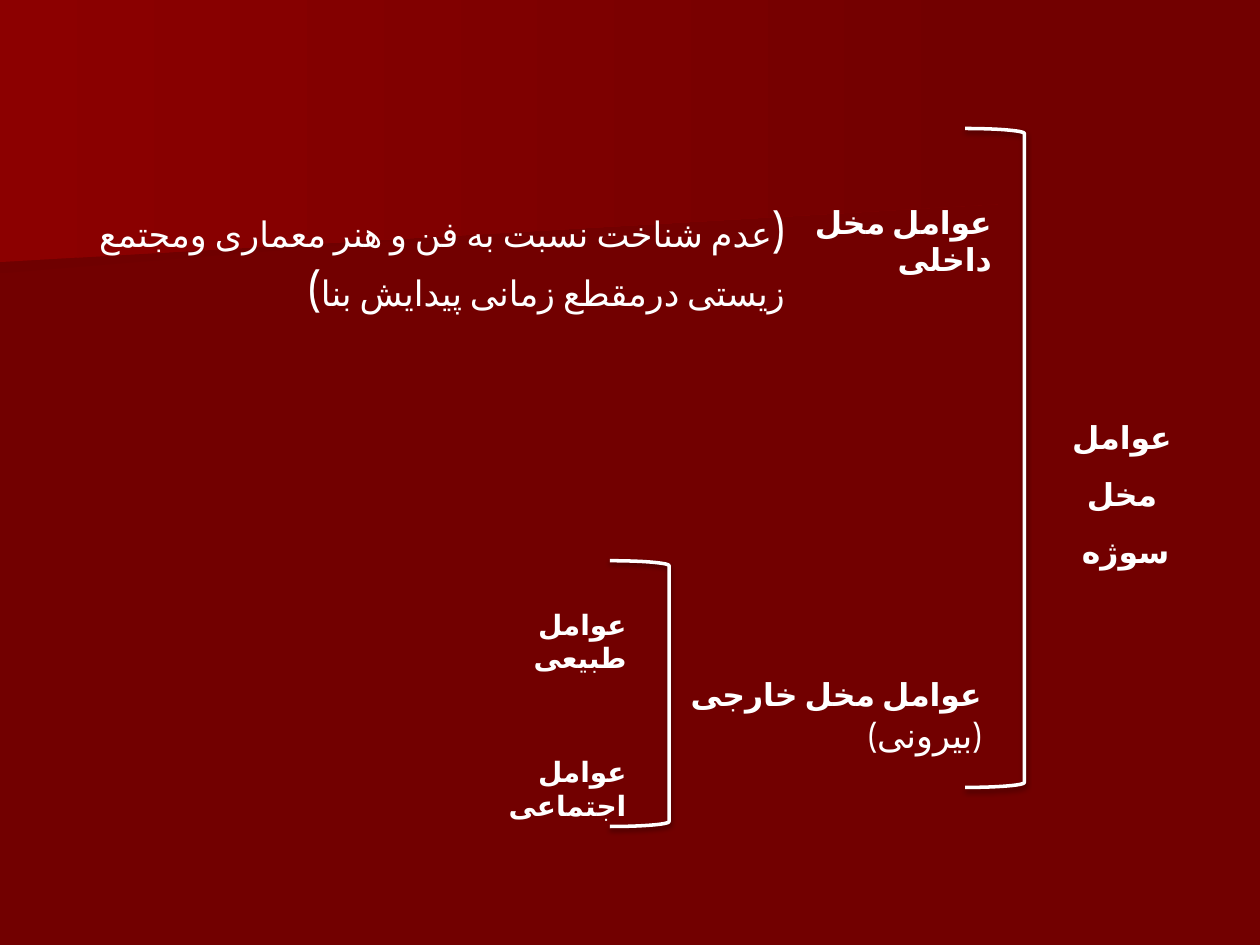
from lxml import etree
from pptx import Presentation
from pptx.dml.color import RGBColor
from pptx.enum.shapes import MSO_SHAPE
from pptx.enum.text import PP_ALIGN
from pptx.oxml import parse_xml
from pptx.oxml.ns import nsdecls, qn
from pptx.util import Inches, Pt

SHADOW = (
    f'<a:effectLst {nsdecls("a")}>'
    '<a:outerShdw blurRad="39370" dist="20320" dir="5400000" rotWithShape="0">'
    '<a:srgbClr val="000000"><a:alpha val="38000"/></a:srgbClr>'
    '</a:outerShdw></a:effectLst>'
)


def rgb(value):
    return RGBColor.from_string(value)


def add_rtl_text(s, box, runs, align=PP_ALIGN.RIGHT, spacing=None):
    """Add one right-to-left paragraph; runs are (text, size, bold)."""
    tf = s.shapes.add_textbox(*map(Inches, box)).text_frame
    tf.word_wrap = True
    p = tf.paragraphs[0]
    p.alignment = align
    p.line_spacing = spacing
    p._p.get_or_add_pPr().set("rtl", "1")
    for text, size, bold in runs:
        r = p.add_run()
        r.text = text
        r.font.size = Pt(size)
        r.font.bold = bold
        r.font.name = "Cabin"
        r.font.color.rgb = rgb("FFFFFF")
        # Persian letters take the complex-script font and language
        rPr = r._r.get_or_add_rPr()
        rPr.set("lang", "fa-IR")
        etree.SubElement(rPr, qn("a:cs"), typeface="Cabin")


prs = Presentation()
prs.slide_width, prs.slide_height = Inches(10), Inches(7.5)
s = prs.slides.add_slide(prs.slide_layouts[6])
s.background.fill.solid()
s.background.fill.fore_color.rgb = rgb("720000")

# Slanted bands at the top
bands = [
    ("6F0000", [(7.78, 1.53), (0, 2.17), (0, 1.01), (7.79, 1.01), (7.78, 1.28)]),
    ("8C0000", [(7.92, 1.62), (0, 2.08), (0, 0), (7.92, 0)]),
]
for start_color, points in bands:
    start, *rest = [(Inches(x), Inches(y)) for x, y in points]
    builder = s.shapes.build_freeform(*start)
    builder.add_line_segments(rest, close=True)
    sp = builder.convert_to_shape()
    sp.shadow.inherit = False
    sp.line.fill.background()
    sp.fill.gradient()
    sp.fill.gradient_angle = 0
    for stop, color, position in zip(sp.fill.gradient_stops, (start_color, "720000"), (0, 1)):
        stop.color.rgb = rgb(color)
        stop.position = position

# Brackets
for box in [(7.66, 1.02, 0.47, 5.23), (4.84, 4.45, 0.47, 2.11)]:
    sp = s.shapes.add_shape(MSO_SHAPE.RIGHT_BRACKET, *map(Inches, box))
    sp.fill.background()
    sp.line.color.rgb = rgb("FFFFFF")
    sp.line.width = Pt(2)
    sp._element.spPr.append(parse_xml(SHADOW))

# Labels
add_rtl_text(s, (8.2, 3.12, 1.41, 0.97), [("عوامل مخل سوژه ", 18, True)],
             PP_ALIGN.CENTER, 1.5)
labels = [
    ((6.09, 1.56, 1.88, 0.4), [("عوامل مخل داخلی", 18, True)]),
    ((3.59, 4.77, 1.48, 0.37), [("عوامل طبیعی", 16, True)]),
    ((3.59, 5.94, 1.48, 0.37), [("عوامل اجتماعی", 16, True)]),
    ((5.08, 5.31, 2.81, 0.44), [("عوامل مخل خارجی ", 18, True), ("(بیرونی)", 20, False)]),
    ((0.47, 1.53, 5.86, 1.04), [
        ("(", 28, False),
        ("عدم شناخت نسبت به فن و هنر معماری ومجتمع زیستی درمقطع زمانی پیدایش بنا", 20, False),
        (")", 28, False),
    ]),
]
for box, runs in labels:
    add_rtl_text(s, box, runs)

prs.save("out.pptx")
